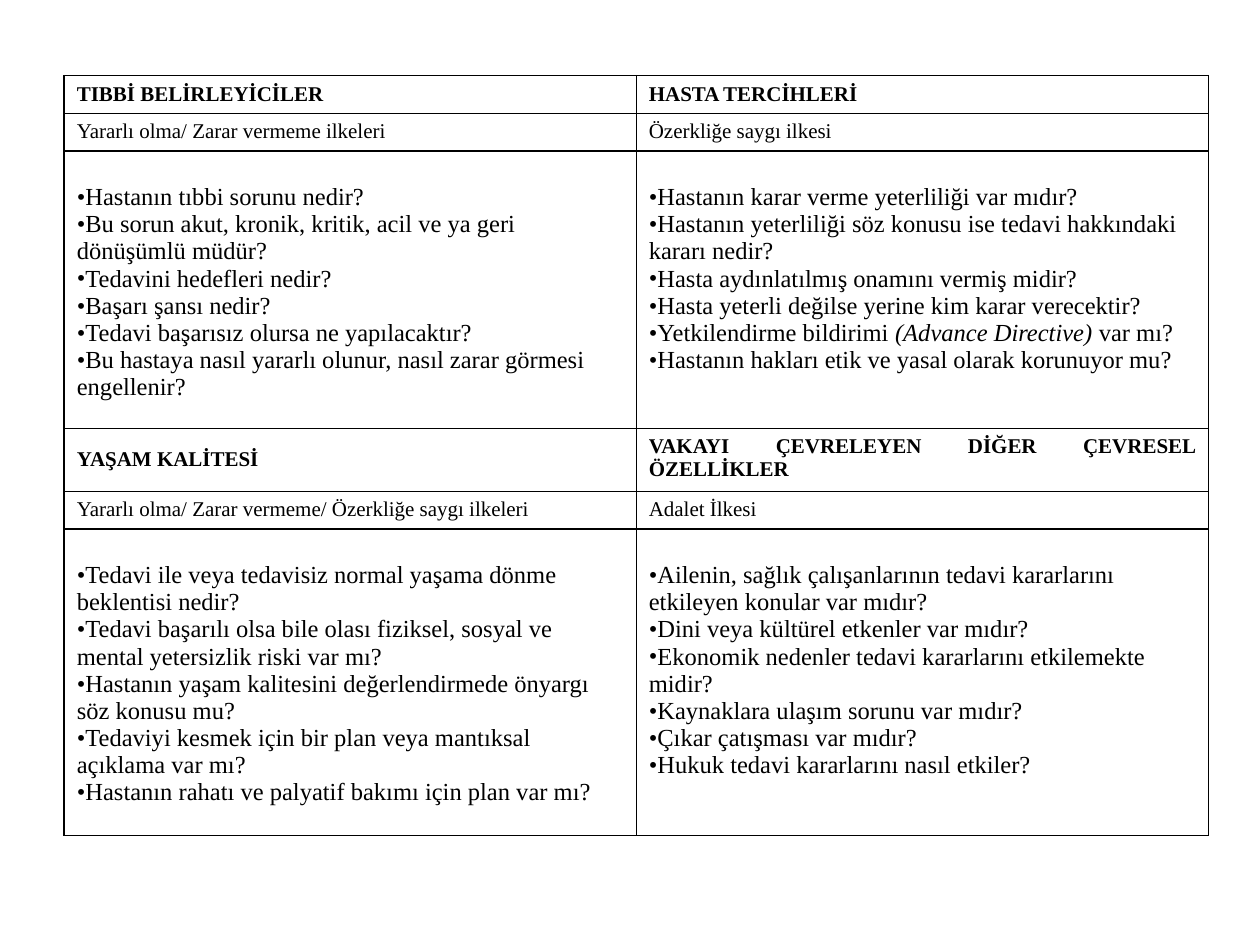
"""Builds a one-slide table of the four topics of clinical ethics case analysis."""
from lxml.etree import SubElement
from pptx import Presentation
from pptx.dml.color import RGBColor
from pptx.enum.text import MSO_ANCHOR, PP_ALIGN
from pptx.oxml.ns import qn
from pptx.util import Inches, Pt

THEME = {
    "font": "Times New Roman",
    "ink": "000000",
    "heading": Pt(12),
    "question": Pt(14),
    "border": Pt(1),
}
COLUMN_WIDTH = 4.54
ROW_HEIGHTS = [0.3, 0.3, 2.2, 0.5, 0.3, 2.43]
SIDE_MARGIN, EDGE_MARGIN, QUESTION_MARGIN = Inches(0.1), Inches(0.05), Inches(0.26)

TOPICS = [
    [
        ("TIBBİ BELİRLEYİCİLER", "Yararlı olma/ Zarar vermeme ilkeleri", [
            "Hastanın tıbbi sorunu nedir?",
            "Bu sorun akut, kronik, kritik, acil ve ya geri dönüşümlü müdür?",
            "Tedavini hedefleri nedir?",
            "Başarı şansı nedir?",
            "Tedavi başarısız olursa ne yapılacaktır?",
            "Bu hastaya nasıl yararlı olunur, nasıl zarar görmesi engellenir?",
        ]),
        ("HASTA TERCİHLERİ", "Özerkliğe saygı ilkesi", [
            "Hastanın karar verme yeterliliği var mıdır?",
            "Hastanın yeterliliği söz konusu ise tedavi hakkındaki kararı nedir?",
            "Hasta aydınlatılmış onamını vermiş midir?",
            "Hasta yeterli değilse yerine kim karar verecektir?",
            "Yetkilendirme bildirimi *(Advance Directive)* var mı?",
            "Hastanın hakları etik ve yasal olarak korunuyor mu?",
        ]),
    ],
    [
        ("YAŞAM KALİTESİ", "Yararlı olma/ Zarar vermeme/ Özerkliğe saygı ilkeleri", [
            "Tedavi ile veya tedavisiz normal yaşama dönme beklentisi nedir?",
            "Tedavi başarılı olsa bile olası fiziksel, sosyal ve mental yetersizlik riski var mı?",
            "Hastanın yaşam kalitesini değerlendirmede önyargı söz konusu mu?",
            "Tedaviyi kesmek için bir plan veya mantıksal açıklama var mı?",
            "Hastanın rahatı ve palyatif bakımı için plan var mı?",
        ]),
        ("VAKAYI ÇEVRELEYEN DİĞER ÇEVRESEL ÖZELLİKLER", "Adalet İlkesi", [
            "Ailenin, sağlık çalışanlarının tedavi kararlarını etkileyen konular var mıdır?",
            "Dini veya kültürel etkenler var mıdır?",
            "Ekonomik nedenler tedavi kararlarını etkilemekte midir?",
            "Kaynaklara ulaşım sorunu var mıdır?",
            "Çıkar çatışması var mıdır?",
            "Hukuk tedavi kararlarını nasıl etkiler?",
        ]),
    ],
]


def write_cell(cell, lines, size, bold=False, align=PP_ALIGN.LEFT, bullet=None):
    """Write one paragraph per line; text between asterisks is italic."""
    for index, line in enumerate(lines):
        frame = cell.text_frame
        paragraph = frame.add_paragraph() if index else frame.paragraphs[0]
        paragraph.alignment = align
        if bullet:
            properties = paragraph._p.get_or_add_pPr()
            properties.set("marL", "0")
            properties.set("indent", "0")
            SubElement(properties, qn("a:buFont"), typeface=THEME["font"])
            SubElement(properties, qn("a:buChar"), char=bullet)
        for part, text in enumerate(line.split("*")):
            run = paragraph.add_run()
            run.text = text
            run.font.name = THEME["font"]
            run.font.size = size
            run.font.bold = bold
            run.font.italic = part % 2 == 1
            run.font.color.rgb = RGBColor.from_string(THEME["ink"])


def frame_cell(cell):
    """Give a cell its margins, four borders and no fill."""
    cell.margin_left = cell.margin_right = SIDE_MARGIN
    cell.margin_top = cell.margin_bottom = EDGE_MARGIN
    properties = cell._tc.get_or_add_tcPr()
    for side in ("lnL", "lnR", "lnT", "lnB"):
        line = SubElement(properties, qn(f"a:{side}"), w=str(THEME["border"]))
        fill = SubElement(line, qn("a:solidFill"))
        SubElement(fill, qn("a:srgbClr"), val=THEME["ink"])
    cell.fill.background()


presentation = Presentation()
presentation.slide_width, presentation.slide_height = Inches(10), Inches(7.5)
slide = presentation.slides.add_slide(presentation.slide_layouts[6])

table = slide.shapes.add_table(
    len(ROW_HEIGHTS), 2, Inches(0.51), Inches(0.6),
    Inches(2 * COLUMN_WIDTH), Inches(sum(ROW_HEIGHTS)),
).table
table.first_row = table.horz_banding = False
for column in table.columns:
    column.width = Inches(COLUMN_WIDTH)
for row, height in zip(table.rows, ROW_HEIGHTS):
    row.height = Inches(height)
for cell in table.iter_cells():
    frame_cell(cell)

for band, topics in enumerate(TOPICS):
    for column, (heading, principle, questions) in enumerate(topics):
        heading_cell, principle_cell, question_cell = (
            table.cell(3 * band + offset, column) for offset in range(3)
        )
        wraps = len(heading) > 40
        heading_cell.vertical_anchor = MSO_ANCHOR.TOP if wraps else MSO_ANCHOR.MIDDLE
        write_cell(heading_cell, [heading], THEME["heading"], bold=True,
                   align=PP_ALIGN.JUSTIFY if wraps else PP_ALIGN.LEFT)
        write_cell(principle_cell, [principle], THEME["heading"], align=PP_ALIGN.JUSTIFY)
        question_cell.margin_top = QUESTION_MARGIN
        write_cell(question_cell, questions, THEME["question"], bullet="•")

presentation.save("out.pptx")
